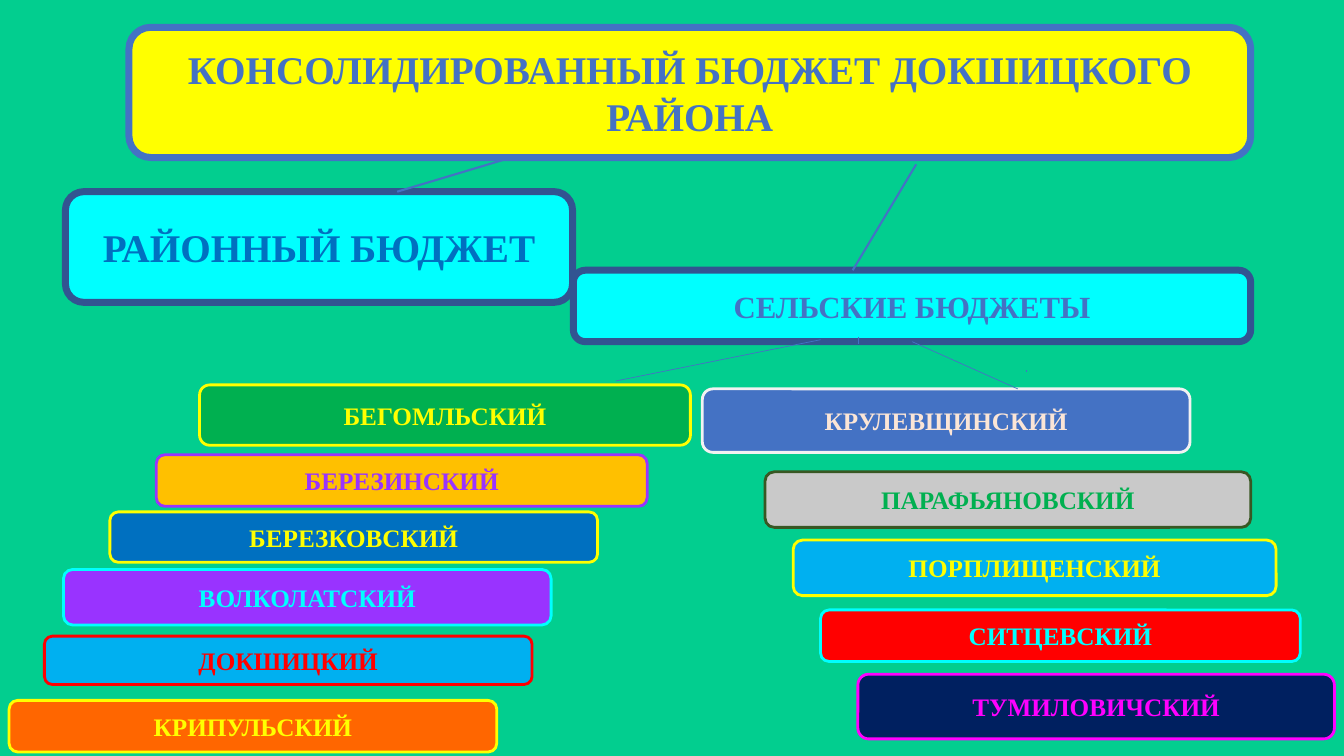
from pptx import Presentation
from pptx.dml.color import RGBColor
from pptx.enum.shapes import MSO_CONNECTOR as CONN, MSO_SHAPE as SHAPE
from pptx.enum.text import MSO_ANCHOR as ANCHOR, MSO_AUTO_SIZE as AUTOSIZE, PP_ALIGN as ALIGN
from pptx.oxml.ns import qn
from pptx.util import Cm, Pt
from lxml import etree

FONT = "Times New Roman"
MINT = RGBColor(0x02, 0xCE, 0x8F)
YELLOW = RGBColor(0xFF, 0xFF, 0x00)
CYAN = RGBColor(0x00, 0xFF, 0xFF)
BLUE = RGBColor(0x44, 0x72, 0xC4)
DARK_BLUE = RGBColor(0x32, 0x54, 0x91)
MID_BLUE = RGBColor(0x00, 0x70, 0xC0)
SKY = RGBColor(0x00, 0xB0, 0xF0)
NAVY = RGBColor(0x00, 0x20, 0x60)
GREEN = RGBColor(0x00, 0xB0, 0x50)
DARK_GREEN = RGBColor(0x38, 0x57, 0x23)
GOLD = RGBColor(0xFF, 0xC0, 0x00)
ORANGE = RGBColor(0xFF, 0x66, 0x00)
PURPLE = RGBColor(0x99, 0x33, 0xFF)
MAGENTA = RGBColor(0xFF, 0x00, 0xFF)
RED = RGBColor(0xFF, 0x00, 0x00)
GREY = RGBColor(0xC9, 0xC9, 0xC9)
PALE = RGBColor(0xF2, 0xF2, 0xF2)
PEACH = RGBColor(0xFB, 0xE5, 0xD6)

TITLE_BOX = (3.25, 0.69, 28.27, 3.28)

# Main budgets: text, box in cm, text size, text colour
BUDGETS = [
    ("РАЙОННЫЙ БЮДЖЕТ", (1.65, 4.83, 12.78, 2.79), 28, MID_BLUE),
    ("СЕЛЬСКИЕ БЮДЖЕТЫ", (14.45, 6.81, 17.07, 1.8), 22, BLUE),
]

# Village councils: text, box in cm, fill, outline, text colour
COUNCILS = [
    ("БЕГОМЛЬСКИЙ", (5.03, 9.7, 12.37, 1.52), GREEN, YELLOW, YELLOW),
    ("БЕРЕЗИНСКИЙ", (3.94, 11.46, 12.37, 1.3), GOLD, PURPLE, PURPLE),
    ("БЕРЕЗКОВСКИЙ", (2.77, 12.9, 12.29, 1.27), MID_BLUE, YELLOW, YELLOW),
    ("ВОЛКОЛАТСКИЙ", (1.6, 14.35, 12.29, 1.4), PURPLE, CYAN, CYAN),
    ("ДОКШИЦКИЙ", (1.12, 16.03, 12.29, 1.22), SKY, RED, RED),
    ("КРИПУЛЬСКИЙ", (0.23, 17.65, 12.29, 1.3), ORANGE, YELLOW, YELLOW),
    ("КРУЛЕВЩИНСКИЙ", (17.7, 9.8, 12.29, 1.6), BLUE, PALE, PEACH),
    ("ПАРАФЬЯНОВСКИЙ", (19.28, 11.89, 12.24, 1.4), GREY, DARK_GREEN, GREEN),
    ("ПОРПЛИЩЕНСКИЙ", (19.99, 13.61, 12.17, 1.4), SKY, YELLOW, YELLOW),
    ("СИТЦЕВСКИЙ", (20.68, 15.37, 12.09, 1.3), RED, CYAN, CYAN),
    ("ТУМИЛОВИЧСКИЙ", (21.62, 16.99, 12.01, 1.63), NAVY, MAGENTA, MAGENTA),
]

# Links: start x, start y, end x, end y in cm, width in points
LINKS = [
    (13.08, 3.91, 10.01, 4.83, 1.5),
    (23.09, 4.14, 21.49, 6.81, 1.5),
    (25.86, 9.37, 25.86, 9.32, 0.5),
    (21.62, 8.48, 21.62, 8.66, 0.5),
    (20.68, 8.56, 15.52, 9.6, 0.5),
    (22.99, 8.61, 25.65, 9.8, 0.5),
]


def write(sp, text, size, color):
    tf = sp.text_frame
    tf.word_wrap = True
    tf.auto_size = AUTOSIZE.NONE
    tf.vertical_anchor = ANCHOR.MIDDLE
    p = tf.paragraphs[0]
    p.alignment = ALIGN.CENTER
    p.line_spacing = 1.0
    r = p.add_run()
    r.text = text
    r.font.name = FONT
    r.font.size = Pt(size)
    r.font.bold = True
    r.font.color.rgb = color


def add_box(s, box, fill, outline, width):
    sp = s.shapes.add_shape(SHAPE.ROUNDED_RECTANGLE, *map(Cm, box))
    sp.shadow.inherit = False
    sp.fill.solid()
    sp.fill.fore_color.rgb = fill
    sp.line.color.rgb = outline
    sp.line.width = Pt(width)
    return sp


def add_title(s, text):
    add_box(s, TITLE_BOX, YELLOW, BLUE, 5)
    sp = s.shapes.title
    sp.left, sp.top, sp.width, sp.height = map(Cm, TITLE_BOX)
    write(sp, text, 28, BLUE)
    # Bring the title text in front of its frame
    s.shapes.element.append(sp.element)


def add_link(s, x1, y1, x2, y2, width):
    link = s.shapes.add_connector(CONN.STRAIGHT, Cm(x1), Cm(y1), Cm(x2), Cm(y2))
    link.line.color.rgb = BLUE
    link.line.width = Pt(width)
    etree.SubElement(link.element.spPr, qn("a:effectLst"))


def main():
    prs = Presentation()
    prs.slide_width, prs.slide_height = Cm(33.87), Cm(19.05)
    s = prs.slides.add_slide(prs.slide_layouts[5])
    s.background.fill.solid()
    s.background.fill.fore_color.rgb = MINT

    # Consolidated budget
    add_title(s, "КОНСОЛИДИРОВАННЫЙ БЮДЖЕТ ДОКШИЦКОГО РАЙОНА")

    # District and village budgets
    for text, box, size, color in BUDGETS:
        write(add_box(s, box, CYAN, DARK_BLUE, 5), text, size, color)

    # Village councils
    for text, box, fill, outline, color in COUNCILS:
        write(add_box(s, box, fill, outline, 2), text, 18, color)

    # Links between the levels
    for link in LINKS:
        add_link(s, *link)

    prs.save("out.pptx")


if __name__ == "__main__":
    main()
